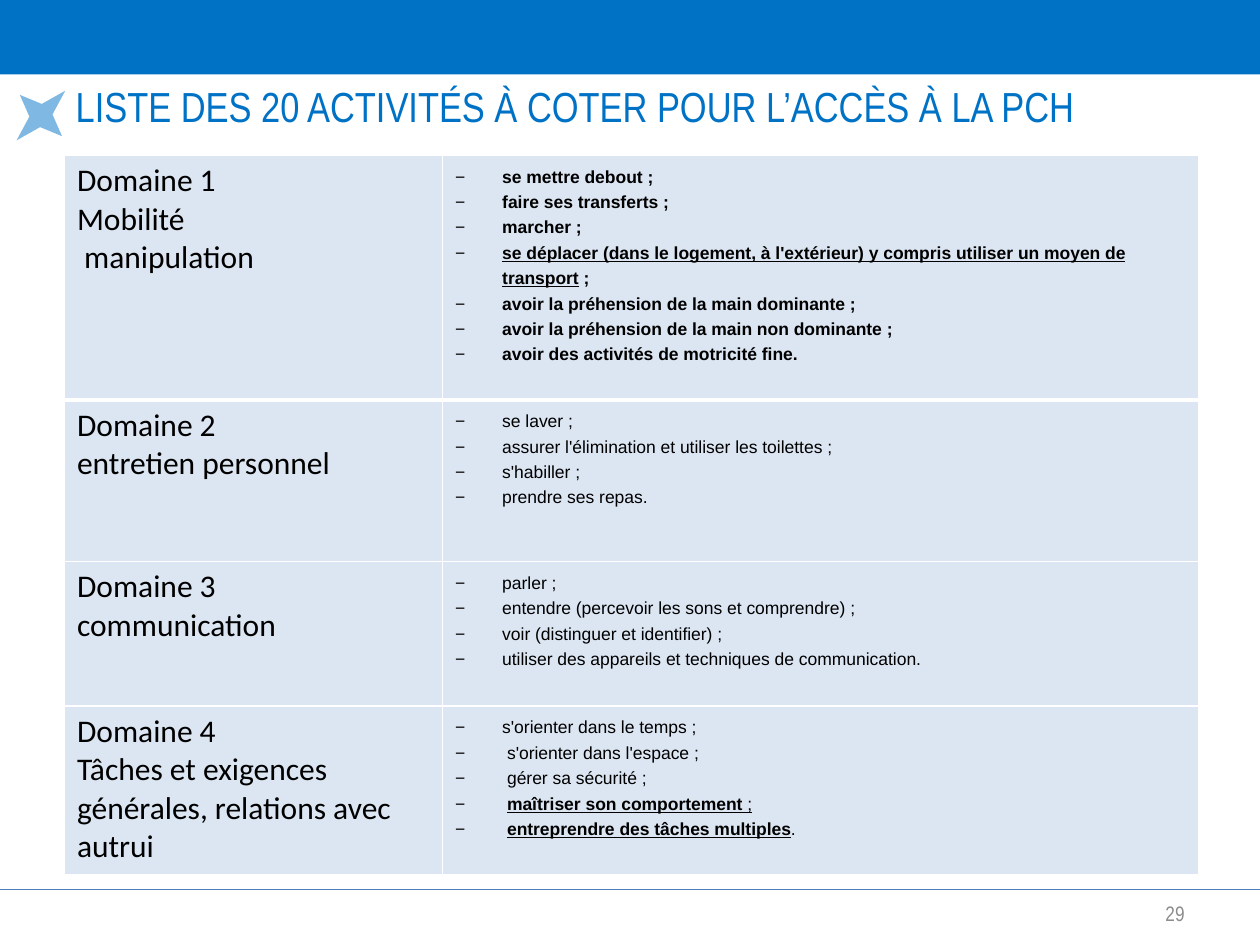
from lxml.etree import SubElement
from pptx import Presentation
from pptx.dml.color import RGBColor
from pptx.enum.shapes import MSO_CONNECTOR, MSO_SHAPE
from pptx.enum.text import MSO_ANCHOR, PP_ALIGN
from pptx.oxml import parse_xml
from pptx.oxml.ns import nsdecls, qn
from pptx.util import Cm, Pt

BLUE = RGBColor(0x00, 0x72, 0xC6)
LINE_BLUE = RGBColor(0x4B, 0x7E, 0xBC)
PALE_BLUE = RGBColor(0xDC, 0xE6, 0xF2)
GREY = RGBColor(0x8C, 0x8C, 0x8C)
BLACK = RGBColor(0, 0, 0)

# Each domain: row height in cm, heading lines, bold by default, activities.
# An activity is a list of (text, bold and underline) parts.
# Styles: "" plain, "b" bold, "u" underlined.
DOMAINS = [
    (4.93, ["Domaine 1", "Mobilité", " manipulation"], [
        [("se mettre debout ;", "b")],
        [("faire ses transferts ;", "b")],
        [("marcher ;", "b")],
        [("se déplacer (dans le logement, à l'extérieur) y compris utiliser "
          "un moyen de transport", "bu"), (" ;", "b")],
        [("avoir la préhension de la main dominante ;", "b")],
        [("avoir la préhension de la main non dominante ;", "b")],
        [("avoir des activités de motricité fine.", "b")],
    ]),
    (3.26, ["Domaine 2", "entretien personnel"], [
        [("se laver ;", "")],
        [("assurer l'élimination et utiliser les toilettes ;", "")],
        [("s'habiller ;", "")],
        [("prendre ses repas.", "")],
    ]),
    (2.91, ["Domaine 3", "communication"], [
        [("parler ;", "")],
        [("entendre (percevoir les sons et comprendre) ;", "")],
        [("voir (distinguer et identifier) ;", "")],
        [("utiliser des appareils et techniques de communication.", "")],
    ]),
    (3.4, ["Domaine 4", "Tâches et exigences générales, relations avec autrui"], [
        [("s'orienter dans le temps ;", "")],
        [(" s'orienter dans l'espace ;", "")],
        [(" gérer sa sécurité ;", "")],
        [(" ", ""), ("maîtriser son comportement", "bu"), (" ;", "u")],
        [(" ", ""), ("entreprendre des tâches multiples", "bu"), (".", "")],
    ]),
]


def set_font(para, name, size, color):
    para.font.name = name
    para.font.size = Pt(size)
    para.font.color.rgb = color


def add_dash(para):
    """Give the paragraph a dash bullet with a hanging indent."""
    props = para._p.get_or_add_pPr()
    props.set("marL", str(Cm(0.95)))
    props.set("indent", str(-Cm(0.95)))
    SubElement(props, qn("a:buFont")).set("typeface", "Arial")
    SubElement(props, qn("a:buChar")).set("char", "−")


deck = Presentation()
deck.slide_width, deck.slide_height = Cm(25.4), Cm(19.05)
page = deck.slides.add_slide(deck.slide_layouts[5])

# Banner, star and footer line
banner = page.shapes.add_shape(MSO_SHAPE.RECTANGLE, 0, 0, Cm(25.4), Cm(1.5))
star = page.shapes.add_shape(
    MSO_SHAPE.STAR_4_POINT, Cm(0.23), Cm(1.63), Cm(1.19), Cm(1.4))
star.rotation = 44.4
star.adjustments[0] = 0.18
for shape in (banner, star):
    shape.shadow.inherit = False
    shape.fill.solid()
    shape.fill.fore_color.rgb = BLUE
    shape.line.fill.background()
star_color = star.fill._xPr.find(qn("a:solidFill"))[0]
SubElement(star_color, qn("a:alpha")).set("val", "50000")

footer_line = page.shapes.add_connector(
    MSO_CONNECTOR.STRAIGHT, 0, Cm(17.93), Cm(25.4), Cm(17.93))
footer_line.line.color.rgb = LINE_BLUE
footer_line.line.width = Pt(0.75)
SubElement(footer_line._element.spPr, qn("a:effectLst"))

# Title
title = page.shapes.title
title.left, title.top, title.width, title.height = Cm(1.27), Cm(1.5), Cm(22.86), Cm(2.2)
title.text_frame.text = "LISTE DES 20 ACTIVITÉS À COTER POUR L’ACCÈS À LA PCH"
title.text_frame.vertical_anchor = MSO_ANCHOR.TOP
title_para = title.text_frame.paragraphs[0]
title_para.alignment = PP_ALIGN.LEFT
set_font(title_para, "Arial Narrow", 24, BLUE)

# Page number
number_box = page.shapes.add_textbox(Cm(18.2), Cm(17.9), Cm(5.93), Cm(1.01))
number_box.text_frame.word_wrap = True
number_box.text_frame.vertical_anchor = MSO_ANCHOR.MIDDLE
number_para = number_box.text_frame.paragraphs[0]
number_para.text = "29"
number_para.alignment = PP_ALIGN.RIGHT
set_font(number_para, "Arial Narrow", 12, GREY)

# Table of domains and activities
total_height = sum(height for height, _, _ in DOMAINS)
table = page.shapes.add_table(
    len(DOMAINS), 2, Cm(1.3), Cm(3.13), Cm(22.86), Cm(total_height)).table
table.first_row = False
table.horz_banding = False
table.columns[0].width = Cm(7.62)
table.columns[1].width = Cm(15.24)

for row, (height, heading, activities) in enumerate(DOMAINS):
    table.rows[row].height = Cm(height)
    heading_cell, activity_cell = table.cell(row, 0), table.cell(row, 1)
    for cell in (heading_cell, activity_cell):
        if row == 0:
            cell._tc.get_or_add_tcPr().append(parse_xml(
                f'<a:lnB {nsdecls("a")} w="{Pt(3)}"><a:solidFill>'
                '<a:srgbClr val="FFFFFF"/></a:solidFill></a:lnB>'))
        cell.fill.solid()
        cell.fill.fore_color.rgb = PALE_BLUE

    heading_cell.text_frame.text = "\n".join(heading)
    for para in heading_cell.text_frame.paragraphs:
        set_font(para, "Calibri", 18, BLACK)

    frame = activity_cell.text_frame
    for index, parts in enumerate(activities):
        para = frame.add_paragraph() if index else frame.paragraphs[0]
        para.line_spacing = 1.3
        if index == len(activities) - 1:
            para.space_after = Pt(5)
        add_dash(para)
        set_font(para, "Arial", 10, BLACK)
        for text, style in parts:
            span = para.add_run()
            span.text = text
            span.font.bold = "b" in style
            span.font.underline = "u" in style

deck.save("out.pptx")
